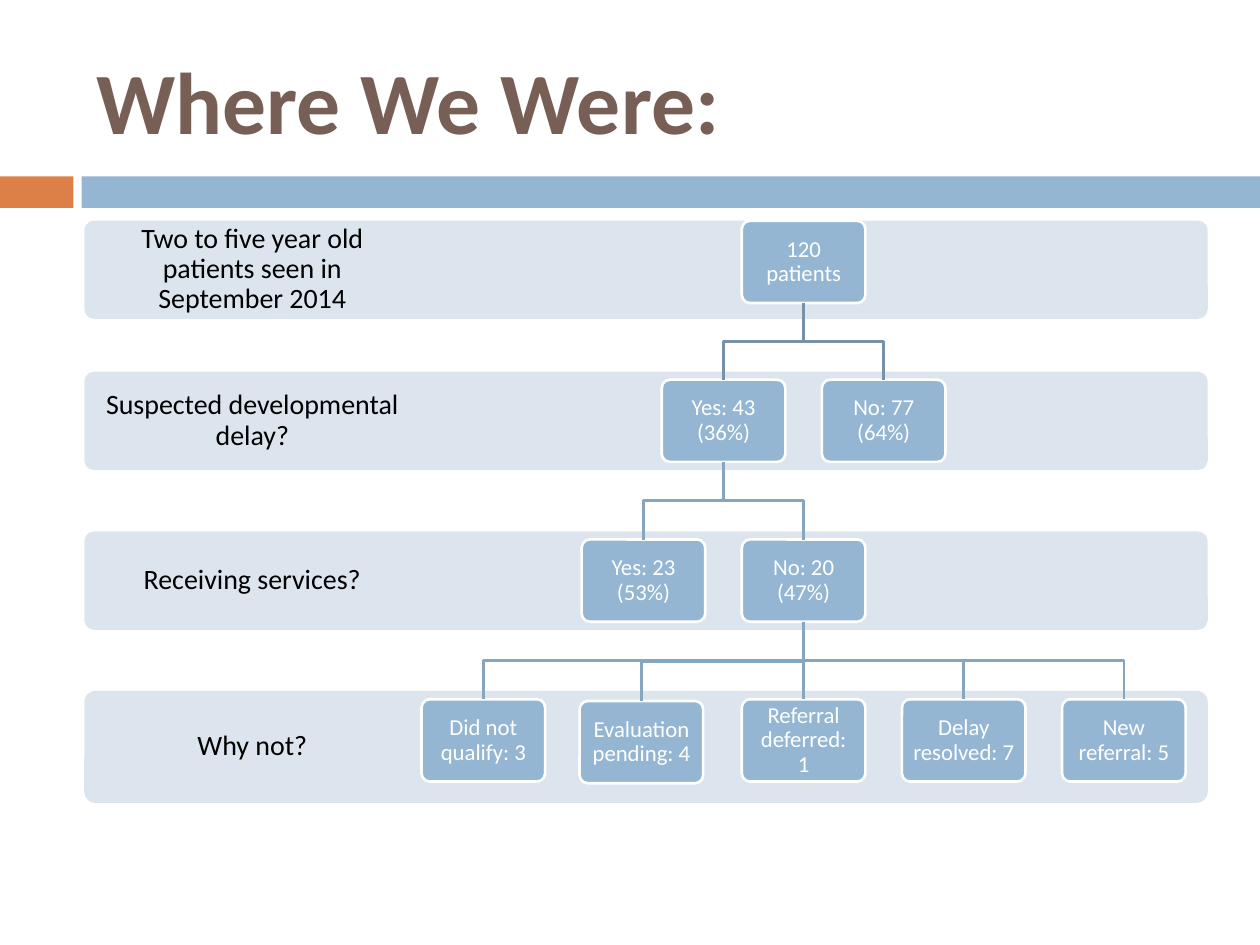
from lxml import etree
from pptx import Presentation
from pptx.dml.color import RGBColor
from pptx.enum.shapes import MSO_CONNECTOR, MSO_SHAPE
from pptx.enum.text import MSO_ANCHOR, MSO_AUTO_SIZE, PP_ALIGN
from pptx.oxml.ns import qn
from pptx.util import Pt

RECTANGLE = MSO_SHAPE.RECTANGLE
ROUNDED = MSO_SHAPE.ROUNDED_RECTANGLE
STRAIGHT = MSO_CONNECTOR.STRAIGHT
MIDDLE = MSO_ANCHOR.MIDDLE
NO_AUTOFIT = MSO_AUTO_SIZE.NONE
CENTER, LEFT = PP_ALIGN.CENTER, PP_ALIGN.LEFT

BLUE, ORANGE, BAND, WHITE = "94B6D2", "DD8047", "DCE5EE", "FFFFFF"
TOP_LINK, LOWER_LINK = "7792A8", "86A5BF"
MARGIN, BAND_WIDTH, LABEL_WIDTH = 48.2, 642, 192
BOX_WIDTH, BOX_HEIGHT = 70.6, 47
ROOT_CENTER, COLUMN_STEP = 459.2, 91.5

# label, band top, band height, box top
BANDS = [
    ("Two to five year old patients seen in September 2014", 126, 56.2, 126.2),
    ("Suspected developmental delay?", 212.4, 56.2, 217),
    ("Receiving services?", 303.7, 56.2, 308.3),
    ("Why not?", 394.8, 64, 399.6),
]
# text, level, columns from the root, parent, shift
BOXES = [
    ("120 patients", 0, 0, None, (0, 0)),
    ("Yes: 43 (36%)", 1, -0.5, "120 patients", (0, 0)),
    ("No: 77 (64%)", 1, 0.5, "120 patients", (0, 0)),
    ("Yes: 23 (53%)", 2, -1, "Yes: 43 (36%)", (0, 0)),
    ("No: 20 (47%)", 2, 0, "Yes: 43 (36%)", (0, 0)),
    ("Did not qualify: 3", 3, -2, "No: 20 (47%)", (0, 0)),
    ("Evaluation pending: 4", 3, -1, "No: 20 (47%)", (-1.2, 1)),
    ("Referral deferred: 1", 3, 0, "No: 20 (47%)", (0, 0)),
    ("Delay resolved: 7", 3, 1, "No: 20 (47%)", (0, 0)),
    ("New referral: 5", 3, 2, "No: 20 (47%)", (0, 0)),
]


def color(value):
    """Return the colour for a hex string."""
    return RGBColor.from_string(value)


def write(shape, text, size, text_color, bold=False, align=CENTER, inset=5, spacing=0.9):
    """Put one formatted paragraph into a shape."""
    frame = shape.text_frame
    frame.word_wrap = True
    frame.auto_size = NO_AUTOFIT
    frame.vertical_anchor = MIDDLE
    frame.margin_left = frame.margin_right = Pt(inset)
    frame.margin_top = frame.margin_bottom = Pt(inset)
    paragraph = frame.paragraphs[0]
    paragraph.alignment = align
    paragraph.line_spacing = spacing
    run = paragraph.add_run()
    run.text = text
    run.font.name = "Calibri"
    run.font.size = Pt(size)
    run.font.bold = bold
    run.font.color.rgb = color(text_color)


def add_block(slide, kind, left, top, width, height, fill, line=None):
    """Add a filled preset shape."""
    shape = slide.shapes.add_shape(kind, Pt(left), Pt(top), Pt(width), Pt(height))
    shape.shadow.inherit = False
    shape.fill.solid()
    shape.fill.fore_color.rgb = color(fill)
    if line:
        shape.line.color.rgb = color(line)
        shape.line.width = Pt(1.5)
    else:
        shape.line.fill.background()
    if kind == ROUNDED:
        shape.adjustments[0] = 0.1
    return shape


def add_title(slide, text):
    """Place and format the title placeholder."""
    title = slide.shapes.title
    title.left, title.top, title.width, title.height = Pt(48), Pt(18), Pt(642), Pt(78)
    write(title, text, 50, "775F55", bold=True, align=LEFT, inset=7.2, spacing=1)


def add_band(slide, label, top, height):
    """Add a level's background band and its label."""
    add_block(slide, ROUNDED, MARGIN, top, BAND_WIDTH, height, BAND)
    box = slide.shapes.add_textbox(Pt(MARGIN), Pt(top), Pt(LABEL_WIDTH), Pt(height))
    write(box, label, 16, "000000", inset=8.6)


def add_box(slide, text, level, column, shift):
    """Add one box of the tree."""
    left = ROOT_CENTER + column * COLUMN_STEP - BOX_WIDTH / 2 + shift[0]
    top = BANDS[level][3] + shift[1]
    box = add_block(slide, ROUNDED, left, top, BOX_WIDTH, BOX_HEIGHT, BLUE, WHITE)
    write(box, text, 13, WHITE)
    return box


def add_link(slide, parent, child, line_color):
    """Link a parent box to a child, straight or with a shared elbow height."""
    start_x, start_y = parent.left + parent.width // 2, parent.top + parent.height
    end_x, end_y = child.left + child.width // 2, child.top
    if start_x == end_x:
        link = slide.shapes.add_connector(STRAIGHT, start_x, start_y, end_x, end_y)
        link.begin_connect(parent, 2)
        link.end_connect(child, 0)
        etree.SubElement(link.line._get_or_add_ln().getparent(), qn("a:effectLst"))
    else:
        middle = (start_y + end_y) // 2
        builder = slide.shapes.build_freeform(start_x, start_y)
        builder.add_line_segments(
            [(start_x, middle), (end_x, middle), (end_x, end_y)], close=False)
        link = builder.convert_to_shape()
        link.fill.background()
        link.shadow.inherit = False
    link.line.color.rgb = color(line_color)
    link.line.width = Pt(1.5)


def main():
    """Build and save the slide."""
    presentation = Presentation()
    presentation.slide_width, presentation.slide_height = Pt(720), Pt(540)
    slide = presentation.slides.add_slide(presentation.slide_layouts[5])
    add_block(slide, RECTANGLE, 0, 100.8, 42, 18, ORANGE)
    add_block(slide, RECTANGLE, 46.6, 100.8, 673.4, 18, BLUE)
    add_title(slide, "Where We Were:")
    for label, top, height, _ in BANDS:
        add_band(slide, label, top, height)
    boxes = {}
    for text, level, column, parent, shift in BOXES:
        boxes[text] = add_box(slide, text, level, column, shift)
        if parent:
            line_color = TOP_LINK if level == 1 else LOWER_LINK
            add_link(slide, boxes[parent], boxes[text], line_color)
    presentation.save("out.pptx")


if __name__ == "__main__":
    main()
